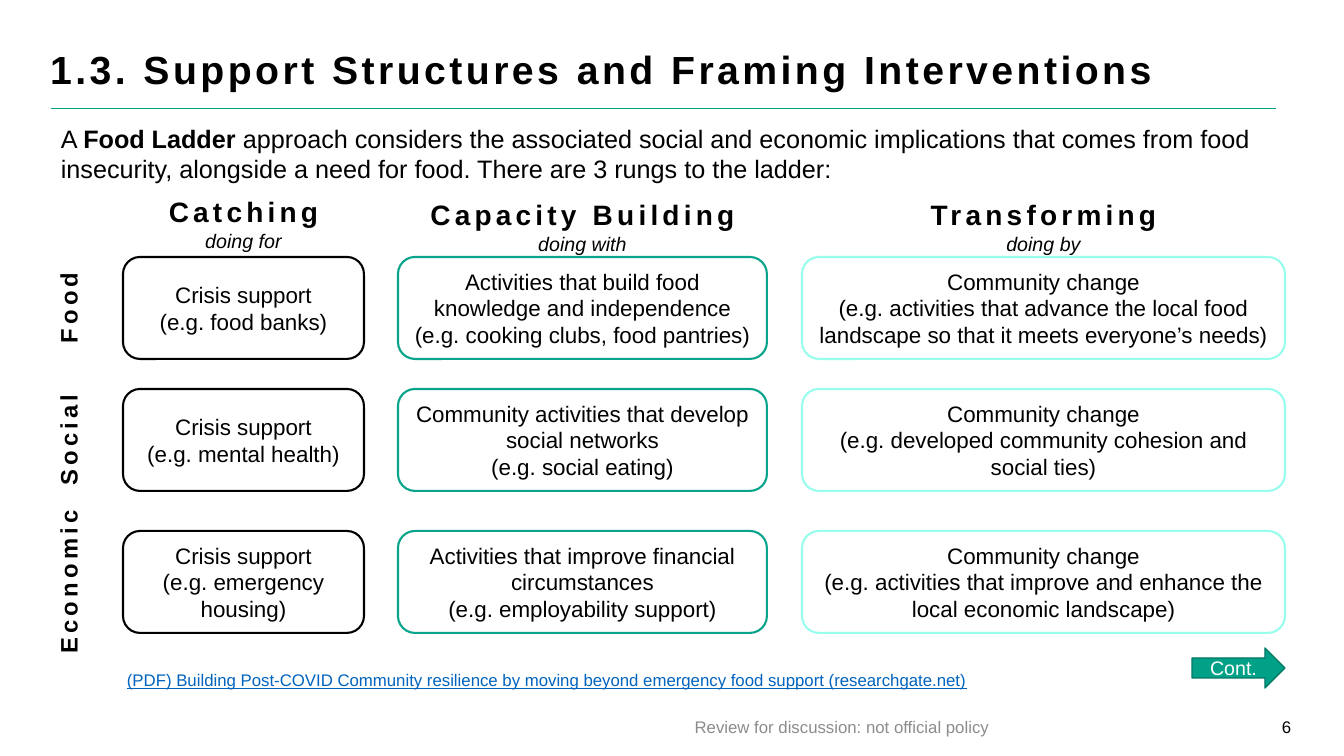
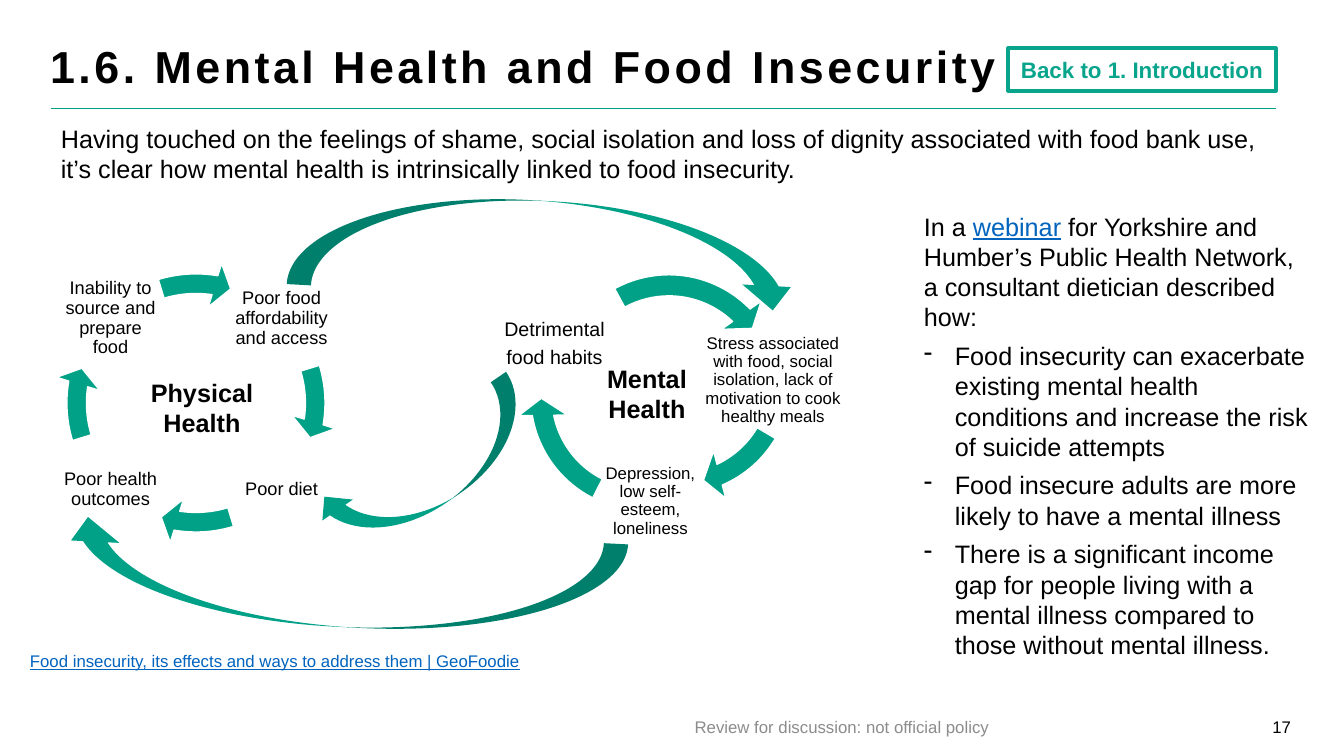
import pptx
import pptx.dml.color
import pptx.enum.shapes
import pptx.enum.text
import pptx.util
from lxml import etree
from pptx.oxml.ns import qn

RGBColor = pptx.dml.color.RGBColor
Pt = pptx.util.Pt
SHAPE = pptx.enum.shapes.MSO_SHAPE
CONNECTOR = pptx.enum.shapes.MSO_CONNECTOR
ALIGN = pptx.enum.text.PP_ALIGN
ANCHOR = pptx.enum.text.MSO_ANCHOR

BLACK = RGBColor(0x00, 0x00, 0x00)
WHITE = RGBColor(0xFF, 0xFF, 0xFF)
GREY = RGBColor(0x8C, 0x8C, 0x8C)
TEAL = RGBColor(0x01, 0xA1, 0x88)
DARK_TEAL = RGBColor(0x01, 0x77, 0x65)
BRIGHT_TEAL = RGBColor(0x08, 0xA4, 0x8C)
PALE_TEAL = RGBColor(0x97, 0xFE, 0xEE)
LINK_BLUE = RGBColor(0x00, 0x63, 0xBE)

SLIDE_WIDTH, SLIDE_HEIGHT = 1344, 756
EMU_PER_PX = 12192000 / SLIDE_WIDTH
FONT = "Arial"
LINK = {"color": LINK_BLUE, "underline": True}
FOOTER = "Review for discussion: not official policy"

# Ladder slide
LADDER_TITLE = "1.3. Support Structures and Framing Interventions"
LADDER_INTRO = [[
    "A ",
    ("Food Ladder ", {"bold": True}),
    "approach considers the associated social and economic implications that comes from "
    "food insecurity, alongside a need for food. There are 3 rungs to the ladder:",
]]
LADDER_SOURCE = ("(PDF) Building Post-COVID Community resilience by moving beyond "
                 "emergency food support (researchgate.net)")
# heading, subheading, left, width, heading top, outline, (activity, example) for each row
RUNGS = [
    ("Catching", "doing for", 123, 241, 190, BLACK, [
        ("Crisis support", "(e.g. food banks)"),
        ("Crisis support", "(e.g. mental health)"),
        ("Crisis support", "(e.g. emergency housing)"),
    ]),
    ("Capacity Building", "doing with", 398, 369, 193, BRIGHT_TEAL, [
        ("Activities that build food knowledge and independence",
         "(e.g. cooking clubs, food pantries)"),
        ("Community activities that develop social networks", "(e.g. social eating)"),
        ("Activities that improve financial circumstances", "(e.g. employability support)"),
    ]),
    ("Transforming", "doing by", 802, 483, 193, PALE_TEAL, [
        ("Community change",
         "(e.g. activities that advance the local food landscape so that it meets "
         "everyone’s needs)"),
        ("Community change", "(e.g. developed community cohesion and social ties)"),
        ("Community change",
         "(e.g. activities that improve and enhance the local economic landscape)"),
    ]),
]
ROWS = [("Food", 257), ("Social", 389), ("Economic", 531)]
ROW_HEIGHT = 102
ROW_LABEL_CENTRE, ROW_LABEL_WIDTH, ROW_LABEL_HEIGHT = 69, 204, 40

# Mental health slide
HEALTH_TITLE = "1.6. Mental Health and Food Insecurity"
HEALTH_INTRO = [
    "Having touched on the feelings of shame, social isolation and loss of dignity associated "
    "with food bank use, it’s clear how mental health is intrinsically linked to food insecurity."
]
HEALTH_SOURCE = "Food insecurity, its effects and ways to address them | GeoFoodie"
WEBINAR_LEAD = [
    "In a ", ("webinar", LINK),
    " for Yorkshire and Humber’s Public Health Network, a consultant dietician described how:",
]
WEBINAR_POINTS = [
    "Food insecurity can exacerbate existing mental health conditions and increase the risk "
    "of suicide attempts",
    "Food insecure adults are more likely to have a mental illness",
    "There is a significant income gap for people living with a mental illness compared to "
    "those without mental illness.",
]
CYCLE_NAMES = [("Mental", 647, 358), ("Physical", 202, 372)]
# paragraphs, box, text size
MENTAL_LABELS = [
    (["Stress associated with food, social isolation, lack of motivation to cook healthy meals"],
     (700, 327, 146, 107), 12),
    (["Depression, low self-esteem, loneliness"], (597, 448, 107, 107), 12),
    (["Detrimental", "food habits"], (490, 291, 129, 107), 14),
]
PHYSICAL_LABELS = [
    ([text], (left, top, 101, 101), 13) for text, left, top in [
        ("Poor food affordability and access", 231, 268),
        ("Poor diet", 231, 439),
        ("Poor health outcomes", 60, 439),
        ("Inability to source and prepare food", 60, 268),
    ]
]
# box, start and end angle in degrees
MENTAL_ARROWS = [
    ((551, 254, 254, 254), 30.54, 65.99),
    ((517, 270, 254, 254), 116.9, 169.66),
    ((542, 261, 254, 254), 241.32, 314.88),
]
PHYSICAL_ARROWS = [
    ((54, 261, 284, 284), (343.07 + 90 * turn) % 360, (9.18 + 90 * turn) % 360)
    for turn in range(4)
]
# thickness, head angle in degrees, head size
MENTAL_ARROW_FORM = (0.083, 9.61, 0.096)
PHYSICAL_ARROW_FORM = (0.069, 7.75, 0.08)
# box, rotation
LINKING_ARROWS = [
    ((289, 201, 511, 97), 3.1),
    ((61, 530, 565, 97), 182.9),
    ((309, 433, 239, 74), 145.5),
]


def px(length):
    return round(length * EMU_PER_PX)


def style_run(run, size=18, color=BLACK, spacing=None, **formats):
    """Format a run; spacing is the extra space between letters in points."""
    for name, value in {"name": FONT, "size": Pt(size), **formats}.items():
        setattr(run.font, name, value)
    run.font.color.rgb = color
    if spacing:
        run.font._element.set("spc", str(round(spacing * 100)))


def write(shape, paragraphs, align=ALIGN.LEFT, anchor=ANCHOR.TOP, inset=None,
          line_spacing=None, space_after=None, **formats):
    """Fill a shape; a paragraph is a string or a list of strings and (string, formats)."""
    frame = shape.text_frame
    frame.word_wrap = True
    frame.vertical_anchor = anchor
    if inset is not None:
        for side in ("left", "top", "right", "bottom"):
            setattr(frame, "margin_" + side, px(inset))
    for index, content in enumerate(paragraphs):
        paragraph = frame.add_paragraph() if index else frame.paragraphs[0]
        paragraph.alignment = align
        if line_spacing:
            paragraph.line_spacing = line_spacing
        if space_after:
            paragraph.space_after = Pt(space_after)
        for part in [content] if isinstance(content, str) else content:
            text, changes = (part, {}) if isinstance(part, str) else part
            run = paragraph.add_run()
            run.text = text
            style_run(run, **{**formats, **changes})
    return shape


def add_text(slide, box, paragraphs, **options):
    return write(slide.shapes.add_textbox(*map(px, box)), paragraphs, **options)


def add_shape(slide, kind, box, fill=None, line=None, line_width=1, rotation=0):
    shape = slide.shapes.add_shape(kind, *map(px, box))
    shape.shadow.inherit = False
    shape.rotation = rotation
    if fill is None:
        shape.fill.background()
    else:
        shape.fill.solid()
        shape.fill.fore_color.rgb = fill
    if line is None:
        shape.line.fill.background()
    else:
        shape.line.color.rgb = line
        shape.line.width = Pt(line_width)
    return shape


def add_dash_bullet(paragraph, indent):
    properties = paragraph._p.get_or_add_pPr()
    properties.set("marL", str(px(indent)))
    properties.set("indent", str(-px(indent)))
    etree.SubElement(properties, qn("a:buChar")).set("char", "-")


def add_base_slide(presentation, title, title_size, title_box, intro, number):
    """Add a slide with the shared title, rule, introduction and footer."""
    slide = presentation.slides.add_slide(presentation.slide_layouts[5])
    heading = slide.shapes.title
    heading.left, heading.top, heading.width, heading.height = map(px, title_box)
    heading.text_frame.auto_size = pptx.enum.text.MSO_AUTO_SIZE.NONE
    write(heading, [title], anchor=ANCHOR.MIDDLE, line_spacing=0.9,
          size=title_size, bold=True, spacing=2.5)
    rule = slide.shapes.add_connector(CONNECTOR.STRAIGHT, px(51), px(108), px(1276), px(108))
    rule.line.color.rgb = TEAL
    rule.line.width = Pt(0.5)
    etree.SubElement(rule._element.spPr, qn("a:effectLst"))
    add_text(slide, (51, 118, 1225, 72), intro)
    add_text(slide, (490, 702, 704, 40), [FOOTER], align=ALIGN.CENTER,
             anchor=ANCHOR.BOTTOM, size=12, color=GREY)
    add_text(slide, (1217, 702, 84, 40), [number], align=ALIGN.RIGHT,
             anchor=ANCHOR.BOTTOM, size=12)
    return slide


def add_cycle(slide, labels, arrows, form):
    thickness, head_angle, head_size = form
    for paragraphs, box, size in labels:
        add_text(slide, box, paragraphs, align=ALIGN.CENTER, anchor=ANCHOR.MIDDLE,
                 inset=2, line_spacing=0.9, space_after=5, size=size)
    for box, start, end in arrows:
        arrow = add_shape(slide, SHAPE.CIRCULAR_ARROW, box, TEAL, WHITE)
        angles = [degrees * 0.6 for degrees in (head_angle, end, start)]
        for index, value in enumerate([thickness, *angles, head_size]):
            arrow.adjustments[index] = value


def build_ladder_slide(presentation):
    slide = add_base_slide(presentation, LADDER_TITLE, 28, (40, 45, 1262, 53),
                           LADDER_INTRO, "6")
    for label, top in ROWS:
        box = (ROW_LABEL_CENTRE - ROW_LABEL_WIDTH / 2,
               top + (ROW_HEIGHT - ROW_LABEL_HEIGHT) / 2, ROW_LABEL_WIDTH, ROW_LABEL_HEIGHT)
        row_label = add_text(slide, box, [label], align=ALIGN.CENTER,
                             size=17, bold=True, spacing=3)
        row_label.rotation = 270
    for heading, subheading, left, width, heading_top, outline, activities in RUNGS:
        add_text(slide, (left, heading_top, width, 67),
                 [[(heading, {"size": 20, "bold": True, "spacing": 3})],
                  [(subheading, {"size": 14, "italic": True})]], align=ALIGN.CENTER)
        for (_, top), activity in zip(ROWS, activities):
            card = add_shape(slide, SHAPE.ROUNDED_RECTANGLE, (left, top, width, ROW_HEIGHT),
                             WHITE, outline, 1.5)
            write(card, activity, align=ALIGN.CENTER, anchor=ANCHOR.MIDDLE, size=16)
    add_text(slide, (117, 665, 939, 30), [LADDER_SOURCE], size=12, **LINK)
    next_arrow = add_shape(slide, SHAPE.RIGHT_ARROW, (1192, 648, 93, 40), TEAL, DARK_TEAL)
    write(next_arrow, ["Cont."], align=ALIGN.CENTER, anchor=ANCHOR.MIDDLE,
          size=14, color=WHITE)


def build_health_slide(presentation):
    slide = add_base_slide(presentation, HEALTH_TITLE, 32, (40, 39, 1262, 59),
                           HEALTH_INTRO, "17")
    back_button = add_shape(slide, SHAPE.RECTANGLE, (1008, 48, 268, 43),
                            line=BRIGHT_TEAL, line_width=2.25)
    write(back_button, ["Back to 1. Introduction"], align=ALIGN.CENTER,
          anchor=ANCHOR.MIDDLE, size=16, color=BRIGHT_TEAL, bold=True)
    add_cycle(slide, MENTAL_LABELS, MENTAL_ARROWS, MENTAL_ARROW_FORM)
    for name, centre, top in CYCLE_NAMES:
        add_text(slide, (centre - 70, top, 140, 72), [name, "Health"],
                 align=ALIGN.CENTER, bold=True)
    for box, rotation in LINKING_ARROWS:
        add_shape(slide, SHAPE.CURVED_DOWN_ARROW, box, TEAL, rotation=rotation)
    add_cycle(slide, PHYSICAL_LABELS, PHYSICAL_ARROWS, PHYSICAL_ARROW_FORM)
    webinar = add_text(slide, (914, 206, 410, 463), [WEBINAR_LEAD, *WEBINAR_POINTS],
                       space_after=6)
    for paragraph in webinar.text_frame.paragraphs[1:]:
        add_dash_bullet(paragraph, 31)
    add_text(slide, (20, 646, 545, 30), [HEALTH_SOURCE], size=12, **LINK)


def main():
    presentation = pptx.Presentation()
    presentation.slide_width = px(SLIDE_WIDTH)
    presentation.slide_height = px(SLIDE_HEIGHT)
    build_ladder_slide(presentation)
    build_health_slide(presentation)
    presentation.save("out.pptx")


if __name__ == "__main__":
    main()
